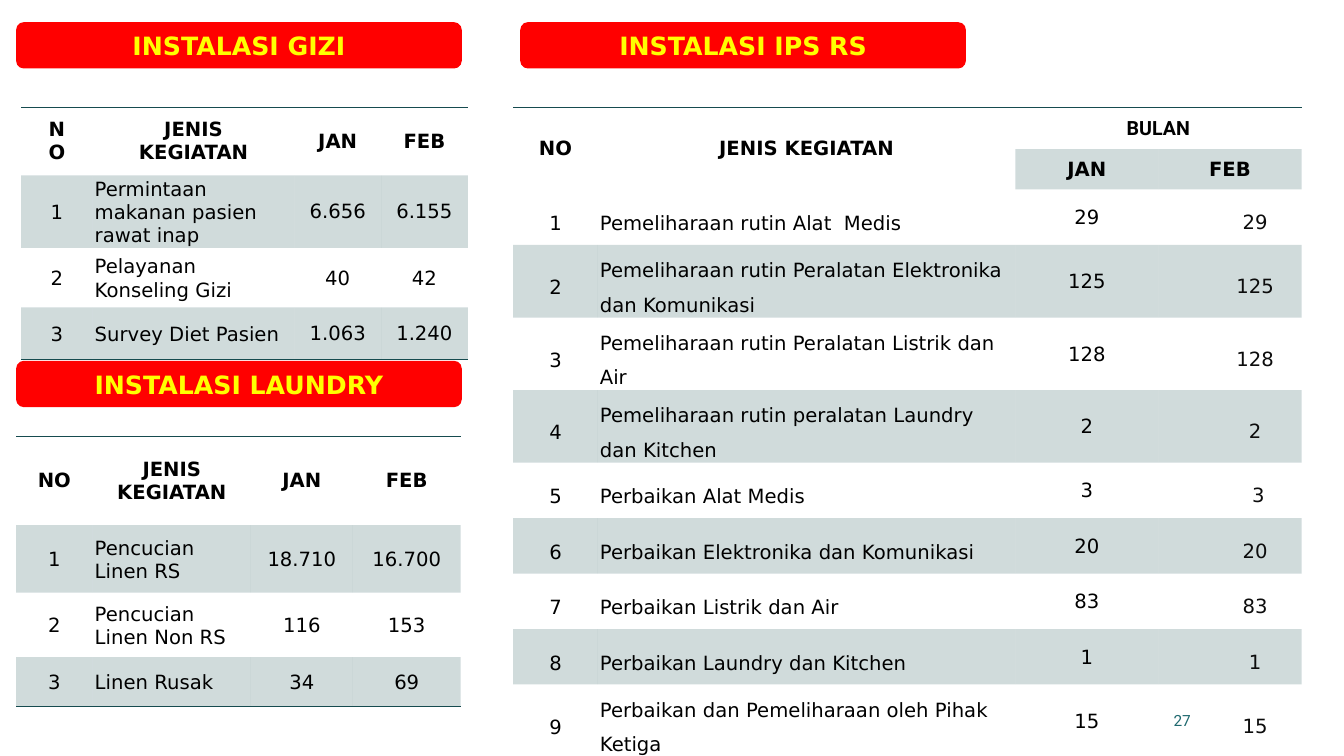
from lxml.etree import SubElement
from pptx import Presentation
from pptx.dml.color import RGBColor
from pptx.enum.shapes import MSO_SHAPE
from pptx.enum.text import MSO_ANCHOR, PP_ALIGN
from pptx.oxml.ns import qn
from pptx.util import Inches, Pt

BANNERS = [
    ("INSTALASI GIZI", 0.16, 0.22),
    ("INSTALASI LAUNDRY", 0.16, 3.58),
    ("INSTALASI IPS RS", 5.16, 0.22),
]
HEAD = ("NO", "JENIS KEGIATAN", "JAN", "FEB")
GIZI = [
    HEAD,
    ("1", "Permintaan makanan pasien rawat inap", "6.656", "6.155"),
    ("2", "Pelayanan Konseling Gizi", "40", "42"),
    ("3", "Survey Diet Pasien", "1.063", "1.240"),
]
LAUNDRY = [
    HEAD,
    ("1", "Pencucian Linen RS", "18.710", "16.700"),
    ("2", "Pencucian Linen Non RS", "116", "153"),
    ("3", "Linen Rusak", "34", "69"),
]
IPS = [
    ("NO", "JENIS KEGIATAN", "BULAN", ""),
    ("", "", "JAN", "FEB"),
    ("1", "Pemeliharaan rutin Alat  Medis", "29", "29"),
    ("2", "Pemeliharaan rutin Peralatan Elektronika dan Komunikasi", "125", "125"),
    ("3", "Pemeliharaan rutin Peralatan Listrik dan Air", "128", "128"),
    ("4", "Pemeliharaan rutin peralatan Laundry dan Kitchen", "2", "2"),
    ("5", "Perbaikan Alat Medis", "3", " 3"),
    ("6", "Perbaikan Elektronika dan Komunikasi", "20", "20"),
    ("7", "Perbaikan Listrik dan Air", "83", "83"),
    ("8", "Perbaikan Laundry dan Kitchen", "1", "1"),
    ("9", "Perbaikan dan Pemeliharaan oleh Pihak Ketiga", "15", "15"),
]
TABLES = [
    (GIZI, 0.21, 1.07, (0.71, 2, 0.86, 0.86), (0.67, 0.55, 0.59, 0.52), 1),
    (LAUNDRY, 0.16, 4.33, (0.76, 1.57, 1.01, 1.07), (0.88, 0.67, 0.64, 0.49), 1),
    (IPS, 5.09, 1.07, (0.84, 4.14, 1.42, 1.42), (0.41, 0.4) + (0.55,) * 9, 2),
]
PLAIN_STYLE = "{2D5ABB26-0587-4C30-8999-92F81FD0307C}"
TEAL = RGBColor(0x16, 0x4B, 0x4F)
PAGE_TEAL = RGBColor(0x1F, 0x69, 0x6F)
RED = RGBColor(0xFF, 0x00, 0x00)
YELLOW = RGBColor(0xFF, 0xFF, 0x00)
BLACK = RGBColor(0x00, 0x00, 0x00)
INK = RGBColor(0x0C, 0x0C, 0x0C)
SANS, ROBOTO = "DejaVu Sans", "Roboto"


def write(tf, text, size, color, bold=False, align=PP_ALIGN.CENTER, font=SANS):
    p = tf.paragraphs[0]
    p.alignment = align
    r = p.add_run()
    r.text = text
    r.font.size, r.font.bold, r.font.name = Pt(size), bold, font
    r.font.color.rgb = color
    return p


def set_borders(cell, top, bottom):
    tc_pr = cell._tc.get_or_add_tcPr()
    for side, shown in (("L", False), ("R", False), ("T", top), ("B", bottom)):
        ln = SubElement(tc_pr, qn(f"a:ln{side}"), w=str(Pt(1)))
        if shown:
            fill = SubElement(ln, qn("a:solidFill"))
            SubElement(fill, qn("a:srgbClr"), val=str(TEAL))
        else:
            SubElement(ln, qn("a:noFill"))


def set_fill(cell, tinted):
    if not tinted:
        cell.fill.background()
        return
    cell.fill.solid()
    cell.fill.fore_color.rgb = TEAL
    clr = next(cell._tc.tcPr.find(qn("a:solidFill")).iter(qn("a:srgbClr")))
    SubElement(clr, qn("a:alpha"), val="20000")


def set_margins(cell, side, top, bottom):
    cell.margin_left = cell.margin_right = Inches(side)
    cell.margin_top, cell.margin_bottom = Inches(top), Inches(bottom)


def add_grid(s, rows, x, y, widths, heights, heads):
    frame = s.shapes.add_table(len(rows), len(widths), Inches(x), Inches(y),
                               Inches(sum(widths)), Inches(sum(heights)))
    tbl = frame.table
    tbl.first_row = tbl.horz_banding = False
    frame._element.find(".//" + qn("a:tableStyleId")).text = PLAIN_STYLE
    for col, w in zip(tbl.columns, widths):
        col.width = Inches(w)
    for row, h in zip(tbl.rows, heights):
        row.height = Inches(h)
    two_heads = heads == 2
    if two_heads:
        for col in (0, 1):
            tbl.cell(0, col).merge(tbl.cell(1, col))
        tbl.cell(0, 2).merge(tbl.cell(0, 3))
    last = len(rows) - 1
    for i, values in enumerate(rows):
        for j, text in enumerate(values):
            cell = tbl.cell(i, j)
            spans_heads = two_heads and j < 2
            is_head = i < heads
            set_borders(cell, i == 0, i in (0, last) or (i == 1 and spans_heads))
            set_fill(cell, i % 2 == 1 and not (is_head and spans_heads))
            cell.vertical_anchor = MSO_ANCHOR.MIDDLE
            shifted = two_heads and j == 3 and not is_head
            if is_head:
                set_margins(cell, 0.2, 0.08, 0.08)
            elif shifted:
                set_margins(cell, 0.07, 0, 0)
            else:
                edge = 0.02 if j < 2 else 0.01
                set_margins(cell, edge, edge, 0)
            if not text:
                continue
            align = PP_ALIGN.LEFT if j == 1 and not is_head else PP_ALIGN.CENTER
            p = write(cell.text_frame, text, 14, INK if shifted else BLACK, is_head,
                      align, ROBOTO if text == "BULAN" else SANS)
            if two_heads and not is_head and j != 2:
                p.line_spacing = 1.5
            if shifted:
                p._p.get_or_add_pPr().set("marL", str(Inches(0.5)))


def add_banner(s, text, x, y):
    sp = s.shapes.add_shape(MSO_SHAPE.ROUNDED_RECTANGLE, Inches(x), Inches(y),
                            Inches(4.42), Inches(0.46))
    sp.shadow.inherit = False
    sp.fill.solid()
    sp.fill.fore_color.rgb = RED
    sp.line.fill.background()
    sp.text_frame.vertical_anchor = MSO_ANCHOR.MIDDLE
    write(sp.text_frame, text, 18, YELLOW, True)


def add_page_number(s):
    sp = s.shapes.add_textbox(Inches(8.8), Inches(6.95), Inches(3.11), Inches(0.4))
    tf = sp.text_frame
    tf.word_wrap = True
    tf.vertical_anchor = MSO_ANCHOR.MIDDLE
    write(tf, "27", 11, PAGE_TEAL, align=PP_ALIGN.RIGHT, font=ROBOTO)


def main():
    """Build the January and February activity slide for three hospital units."""
    prs = Presentation()
    prs.slide_width, prs.slide_height = Inches(13.33), Inches(7.5)
    s = prs.slides.add_slide(prs.slide_layouts[6])
    add_page_number(s)
    for table in TABLES:
        add_grid(s, *table)
    for banner in BANNERS:
        add_banner(s, *banner)
    prs.save("out.pptx")


if __name__ == "__main__":
    main()
